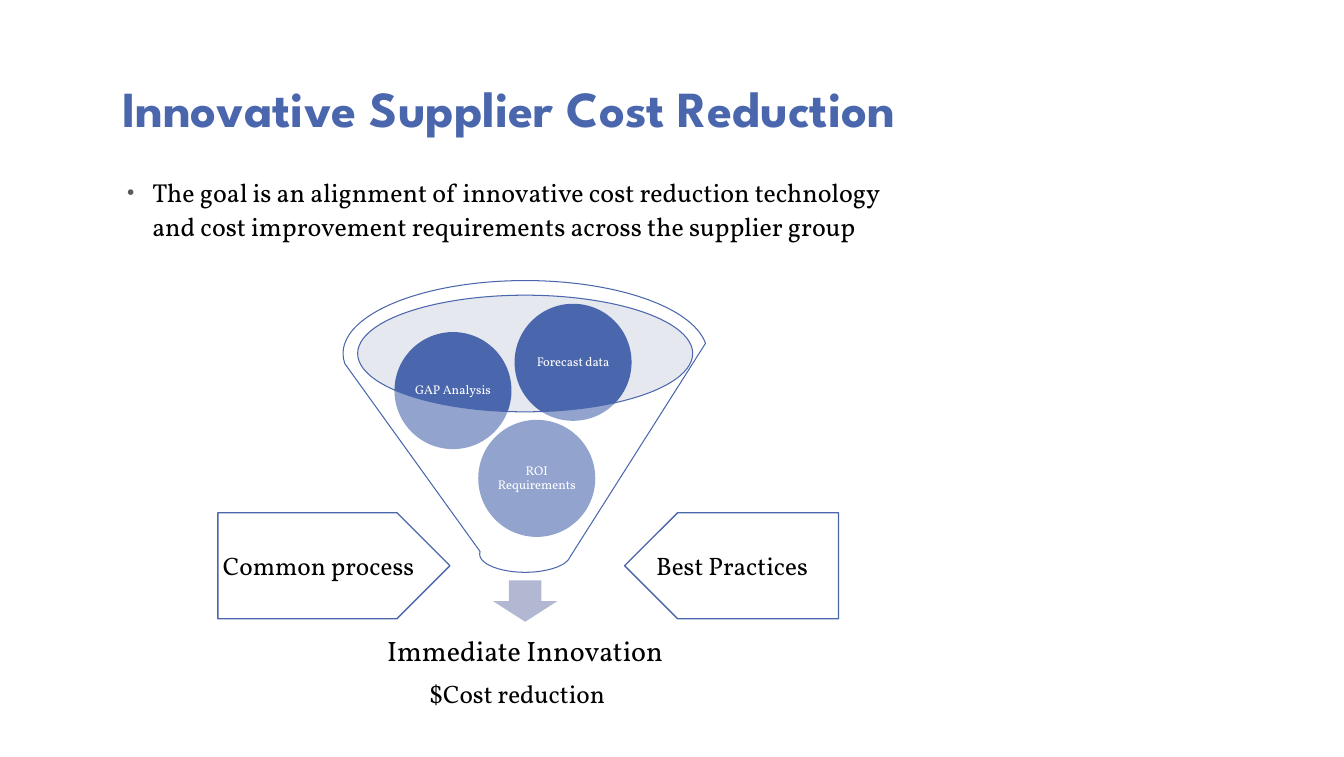
from lxml.etree import SubElement
from pptx import Presentation
from pptx.dml.color import RGBColor
from pptx.enum.shapes import MSO_SHAPE
from pptx.enum.text import MSO_ANCHOR, PP_ALIGN
from pptx.oxml.ns import qn
from pptx.util import Inches, Pt

BLUE = RGBColor(0x4A, 0x66, 0xAC)
RIM_BLUE = RGBColor(0xC1, 0xC6, 0xDB)
ARROW_BLUE = RGBColor(0xB2, 0xB8, 0xD2)
BULLET_GRAY = RGBColor(0x59, 0x59, 0x59)
BLACK = RGBColor(0, 0, 0)
WHITE = RGBColor(0xFF, 0xFF, 0xFF)
HEADING_FONT = "League Spartan"
BODY_FONT = "Vollkorn"

BALL_SIZE = 1.16
# Left and top of each ball, relative to the funnel
BALLS = [
    ("ROI Requirements", 1.34, 1.38),
    ("GAP Analysis", 0.51, 0.51),
    ("Forecast data", 1.7, 0.23),
]


def write(shape, text, size, color=BLACK, font=BODY_FONT, bold=False,
          align=PP_ALIGN.LEFT, anchor=MSO_ANCHOR.MIDDLE, spacing=1.0, inset=0.05):
    frame = shape.text_frame
    frame.word_wrap = True
    frame.vertical_anchor = anchor
    frame.margin_left = frame.margin_right = Inches(inset)
    frame.margin_top = frame.margin_bottom = Inches(inset)
    paragraph = frame.paragraphs[0]
    paragraph.alignment = align
    paragraph.line_spacing = spacing
    run = paragraph.add_run()
    run.text = text
    run.font.name = font
    run.font.size = Pt(size)
    run.font.bold = bold
    run.font.color.rgb = color
    return paragraph


def add_text(slide, box, text, size, **style):
    shape = slide.shapes.add_textbox(*map(Inches, box))
    return write(shape, text, size, **style)


def add_shape(slide, kind, box, fill, line_width=None, opacity=None):
    shape = slide.shapes.add_shape(kind, *map(Inches, box))
    shape.shadow.inherit = False
    shape.fill.solid()
    shape.fill.fore_color.rgb = fill
    if opacity is not None:
        color = shape.fill._xPr.find(qn("a:solidFill"))[0]
        SubElement(color, qn("a:alpha"), val=str(opacity * 1000))
    if line_width is None:
        shape.line.fill.background()
    else:
        shape.line.color.rgb = BLUE
        shape.line.width = Pt(line_width)
    return shape


def add_bullet(paragraph):
    properties = paragraph._p.get_or_add_pPr()
    properties.set("marL", str(Inches(0.3)))
    properties.set("indent", str(Inches(-0.25)))
    bullet_color = SubElement(properties, qn("a:buClr"))
    SubElement(bullet_color, qn("a:srgbClr"), val=str(BULLET_GRAY))
    SubElement(properties, qn("a:buSzPct"), val="80000")
    SubElement(properties, qn("a:buFont"), typeface="Arial")
    SubElement(properties, qn("a:buChar"), char="•")


def add_heading(slide, left, top):
    add_text(slide, (left, top, 9.5, 0.83), "Innovative Supplier Cost Reduction", 36,
             color=BLUE, font=HEADING_FONT, bold=True, anchor=MSO_ANCHOR.BOTTOM, spacing=0.8)
    goal = add_text(slide, (left, top + 1.09, 8.08, 0.83),
                    "The goal is an alignment of innovative cost reduction technology "
                    "and cost improvement requirements across the supplier group",
                    18.5, anchor=MSO_ANCHOR.TOP, spacing=1.1)
    add_bullet(goal)


def add_funnel(slide, left, top, width, height):
    """Draw the funnel with its balls, and the results that flow out below it."""
    add_shape(slide, MSO_SHAPE.OVAL, (left + 0.14, top + 0.14, width - 0.28, 1.16),
              RIM_BLUE, opacity=40)
    add_shape(slide, MSO_SHAPE.DOWN_ARROW,
              (left + (width - 0.64) / 2, top + height + 0.08, 0.64, 0.41), ARROW_BLUE)
    add_text(slide, (left + (width - 3.09) / 2, top + 3.3, 3.09, 0.77),
             "Immediate Innovation", 20, align=PP_ALIGN.CENTER, spacing=0.9, inset=0.16)
    for label, across, down in BALLS:
        ball = add_shape(slide, MSO_SHAPE.OVAL,
                         (left + across, top + down, BALL_SIZE, BALL_SIZE), BLUE)
        write(ball, label, 9, color=WHITE, align=PP_ALIGN.CENTER, spacing=0.9, inset=0.01)
    add_shape(slide, MSO_SHAPE.FUNNEL, (left, top, width, height), WHITE,
              line_width=0.75, opacity=40)
    add_text(slide, (left + 0.26, top + 3.89, 2.93, 0.4), "$Cost reduction", 18,
             align=PP_ALIGN.CENTER)


def add_input(slide, box, label, points_left=False):
    pentagon = add_shape(slide, MSO_SHAPE.PENTAGON, box, WHITE, line_width=1)
    if points_left:
        pentagon._element.spPr.find(qn("a:xfrm")).set("flipH", "1")
    write(pentagon, label, 18)


def main():
    presentation = Presentation()
    presentation.slide_width = Inches(13.32)
    presentation.slide_height = Inches(7.5)
    slide = presentation.slides.add_slide(presentation.slide_layouts[6])
    add_heading(slide, 1.16, 0.58)
    add_funnel(slide, 3.4, 2.78, 3.61, 2.89)
    add_input(slide, (6.19, 5.08, 2.12, 1.05), "Best Practices", points_left=True)
    add_input(slide, (2.16, 5.08, 2.3, 1.05), "Common process")
    presentation.save("out.pptx")


if __name__ == "__main__":
    main()
